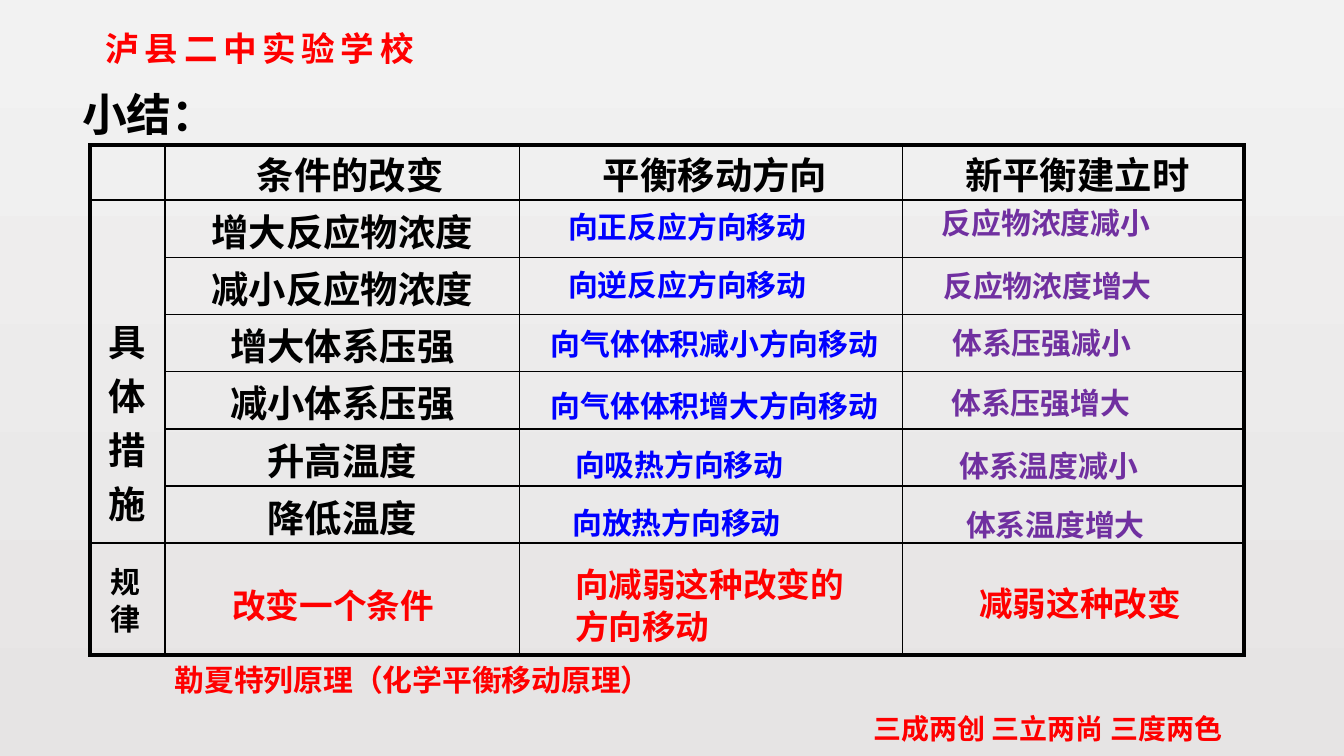
from lxml.etree import SubElement
from pptx import Presentation
from pptx.dml.color import RGBColor
from pptx.enum.text import MSO_ANCHOR, PP_ALIGN
from pptx.oxml.ns import qn
from pptx.util import Cm, Pt

FONT = "Noto Sans CJK SC"
BLACK, RED, BLUE, PURPLE = "000000", "FF0000", "0000FF", "7030A0"

COLUMN_WIDTHS = [1.42, 6.7, 7.24, 6.45]
ROW_HEIGHTS = [1.04] + [1.08] * 6 + [2.11]
HEADERS = [("条件的改变", 0.3), ("平衡移动方向", 0.15), ("新平衡建立时", 0.15)]
MEASURES = ["增大反应物浓度", "减小反应物浓度", "增大体系压强",
            "减小体系压强", "升高温度", "降低温度"]
DIRECTIONS = [
    ("向正反应方向移动", 10.49, 3.78),
    ("向逆反应方向移动", 10.49, 4.88),
    ("向气体体积减小方向移动", 10.16, 5.99),
    ("向气体体积增大方向移动", 10.16, 7.16),
    ("向吸热方向移动", 10.62, 8.28),
    ("向放热方向移动", 10.57, 9.37),
]
OUTCOMES = [
    ("反应物浓度减小", 17.55, 3.71),
    ("反应物浓度增大", 17.58, 4.9),
    ("体系压强减小", 17.75, 5.97),
    ("体系压强增大", 17.73, 7.11),
    ("体系温度减小", 17.88, 8.31),
    ("体系温度增大", 18.01, 9.42),
]
RULES = [
    ("改变一个条件", 4.14, 10.9, 5.31, 1.02),
    ("向减弱这种改变的方向移动", 10.62, 10.49, 5.69, 1.8),
    ("减弱这种改变", 18.26, 10.85, 5.26, 1.02),
]


def rgb(value):
    """Return the colour for a hex string."""
    return RGBColor.from_string(value)


def format_text(frame, size, color, align=PP_ALIGN.LEFT, leading=1.25, spacing=0):
    """Format every paragraph of a text frame alike."""
    for paragraph in frame.paragraphs:
        paragraph.alignment = align
        paragraph.line_spacing = Pt(size * leading)
        font = paragraph.font
        font.name, font.size, font.bold = FONT, Pt(size), True
        font.color.rgb = rgb(color)
        properties = paragraph._p.pPr.find(qn("a:defRPr"))
        SubElement(properties, qn("a:ea")).set("typeface", FONT)
        if spacing:
            properties.set("spc", str(spacing * 100))


def add_text(page, text, left, top, width, height, size, color, spacing=0):
    """Add a wrapped text box and return its frame."""
    box = page.shapes.add_textbox(Cm(left), Cm(top), Cm(width), Cm(height))
    frame = box.text_frame
    frame.word_wrap = True
    frame.text = text
    format_text(frame, size, color, spacing=spacing)
    return frame


def add_title(page, text):
    """Place the heading in the title placeholder."""
    title = page.shapes.title
    title.left, title.top, title.width, title.height = Cm(1.3), Cm(1.47), Cm(3.99), Cm(1.27)
    frame = title.text_frame
    frame.text = text
    frame.vertical_anchor = MSO_ANCHOR.TOP
    format_text(frame, 24, BLACK)


def set_borders(cell, edges):
    """Draw the cell borders, thick where the edge is an outer one."""
    properties = cell._tc.get_or_add_tcPr()
    for side, outer in edges.items():
        line = SubElement(properties, qn(f"a:ln{side}"), w=str(Pt(2.25 if outer else 1)))
        fill = SubElement(line, qn("a:solidFill"))
        SubElement(fill, qn("a:srgbClr"), val=BLACK)


def fill_cell(cell, text, top, indent=0, leading=1.2):
    """Write centred bold text into a cell."""
    cell.text = text
    cell.margin_top = Cm(top)
    cell.margin_left = Cm(0.2 + indent)
    format_text(cell.text_frame, 20, BLACK, PP_ALIGN.CENTER, leading)


def add_summary_table(page):
    """Add the bordered summary table."""
    last_row, last_column = len(ROW_HEIGHTS) - 1, len(COLUMN_WIDTHS) - 1
    frame = page.shapes.add_table(
        last_row + 1, last_column + 1, Cm(1.7), Cm(2.74),
        Cm(sum(COLUMN_WIDTHS)), Cm(sum(ROW_HEIGHTS)))
    table = frame.table
    table.first_row = table.horz_banding = False
    for column, width in zip(table.columns, COLUMN_WIDTHS):
        column.width = Cm(width)
    for r, height in enumerate(ROW_HEIGHTS):
        table.rows[r].height = Cm(height)
        for c in range(last_column + 1):
            cell = table.cell(r, c)
            set_borders(cell, {"L": c == 0, "R": c == last_column,
                               "T": r == 0, "B": r == last_row})
            cell.fill.background()
            cell.margin_left = cell.margin_right = Cm(0.2)
            cell.margin_top = cell.margin_bottom = 0
    for c, (text, indent) in enumerate(HEADERS, 1):
        fill_cell(table.cell(0, c), text, 0.19, indent)
    for r, text in enumerate(MEASURES, 1):
        fill_cell(table.cell(r, 1), text, 0.23)
    table.cell(1, 0).merge(table.cell(len(MEASURES), 0))
    fill_cell(table.cell(1, 0), "具体措施", 2.13, leading=1.45)


def set_background(page):
    """Give the page a vertical grey gradient."""
    fill = page.background.fill
    fill.gradient()
    fill.gradient_angle = 270
    for stop, position, color in zip(fill.gradient_stops, (0, 1), ("F2F2F2", "E6E4E4")):
        stop.position = position
        stop.color.rgb = rgb(color)


def main():
    """Build and save the deck."""
    deck = Presentation()
    deck.slide_width, deck.slide_height = Cm(25.4), Cm(14.28)
    page = deck.slides.add_slide(deck.slide_layouts[5])
    set_background(page)
    add_text(page, "泸县二中实验学校", 1.75, 0.38, 7.19, 1.02, 18, RED, spacing=3)
    add_text(page, "三成两创 三立两尚 三度两色", 16.26, 13.28, 7.85, 0.89, 15, RED)
    add_title(page, "小结：")
    add_summary_table(page)
    for text, left, top in DIRECTIONS:
        add_text(page, text, left, top, 7.2, 0.94, 16, BLUE)
    for text, left, top in OUTCOMES:
        add_text(page, text, left, top, 5.6, 0.94, 16, PURPLE)
    add_text(page, "规\n律", 1.83, 10.49, 1.09, 1.63, 16, BLACK)
    for text, left, top, width, height in RULES:
        add_text(page, text, left, top, width, height, 18, RED)
    principle = add_text(page, "勒夏特列原理（化学平衡移动原理）",
                         3.3, 12.37, 9.2, 0.89, 16, RED)
    principle.vertical_anchor = MSO_ANCHOR.MIDDLE
    principle.margin_left = principle.margin_right = 0
    principle.margin_top = principle.margin_bottom = 0
    deck.save("out.pptx")


if __name__ == "__main__":
    main()
